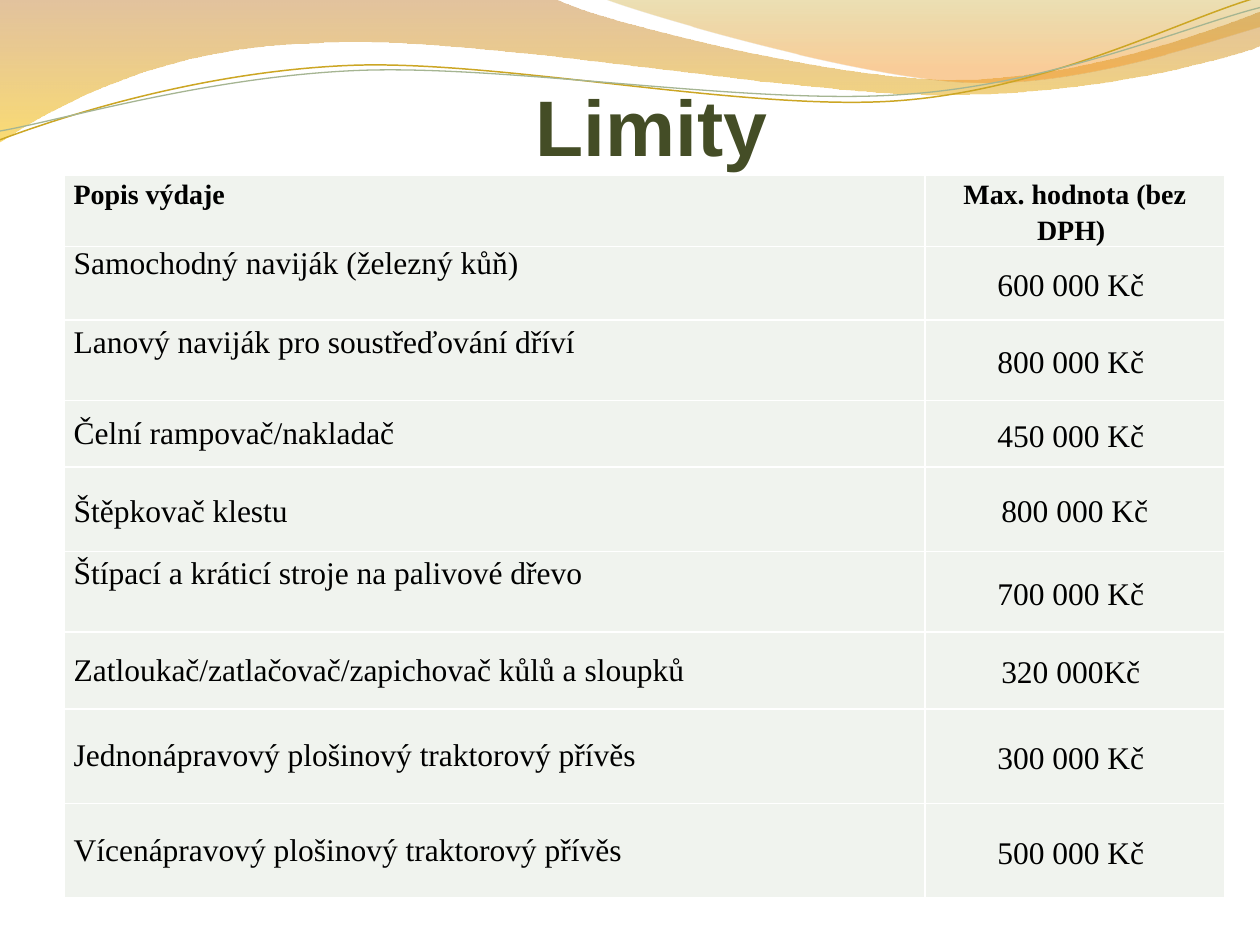
from lxml import etree
from pptx import Presentation, util as u
from pptx.dml.color import RGBColor
from pptx.enum import text as t
from pptx.oxml import parse_xml
from pptx.oxml.ns import nsdecls, qn

WIDE, HIGH = 10, 7.5
UNIT = 1000  # outline units to the inch
WHITE = RGBColor(0xFF, 0xFF, 0xFF)
BLACK = RGBColor(0, 0, 0)
PALE = RGBColor(0xF0, 0xF3, 0xEE)
OLIVE = RGBColor(0x44, 0x4D, 0x26)
BROWN = RGBColor(0xC0, 0x7A, 0x28)
YELLOW = RGBColor(0xF7, 0xBF, 0x00)
KHAKI = RGBColor(0xC0, 0x97, 0x09)
ORANGE = RGBColor(0xF5, 0x93, 0x20)
GOLD = RGBColor(0xCC, 0xA6, 0x24)
SAGE = RGBColor(0xA5, 0xB5, 0x92)

# Outlines: a pair is a corner, six numbers are a Bézier curve
BAND = [(0, 0), (4.4, -0.01), (4.76, 0.17, 6.64, 0.63, 7.58, 0.63),
        (8.53, 0.63, 9.58, 0.26, 10, 0.09), (10.01, 0.36),
        (9.83, 0.44, 8.7, 0.76, 7.46, 0.75), (6.22, 0.75, 3.82, 0.28, 2.57, 0.34),
        (1.29, 0.36, 0.46, 0.83, -0.01, 1.13)]
CREST = [(4.79, -0.01), (5.09, 0.11, 6.82, 0.62, 7.69, 0.65),
         (8.56, 0.69, 9.61, 0.32, 10, 0.21), (10, 0)]
UPPER = [(0, 1.11), (0.48, 0.93, 1.58, 0.57, 2.77, 0.52),
         (3.95, 0.47, 5.93, 0.89, 7.13, 0.8), (8.33, 0.71, 9.38, 0.15, 9.98, -0.02)]
LOWER = [(0, 1.04), (0.47, 0.96, 1.64, 0.61, 2.83, 0.56),
         (4.03, 0.51, 5.97, 0.84, 7.17, 0.75), (8.36, 0.67, 9.41, 0.21, 10, 0.06)]

COLS = [6.83, 2.38]
HEAD = ("Popis výdaje", "Max. hodnota (bez DPH) ")
TOP, MID = t.MSO_ANCHOR.TOP, t.MSO_ANCHOR.MIDDLE
# Label, value, row height, label anchor, label line spacing
ROWS = [
    ("Samochodný naviják (železný kůň)", "600 000 Kč ", 0.58, TOP, 1),
    ("Lanový naviják pro soustřeďování dříví", "800 000 Kč ", 0.64, TOP, 1.15),
    ("Čelní rampovač/nakladač", "450 000 Kč ", 0.53, MID, 1),
    ("Štěpkovač klestu", "800 000 Kč", 0.67, MID, 1.15),
    ("Štípací a kráticí stroje na palivové dřevo", "700 000 Kč ", 0.64, TOP, 1.15),
    ("Zatloukač/zatlačovač/zapichovač kůlů a sloupků", "320 000Kč ", 0.61, MID, 1),
    ("Jednonápravový plošinový traktorový přívěs", "300 000 Kč ", 0.75, MID, 1),
    ("Vícenápravový plošinový traktorový přívěs", "500 000 Kč ", 0.75, MID, 1),
]


def draw(slide, path, close):
    """Join the segment ends, then bend the segments that are curves."""
    segs = [[round(v * UNIT) for v in seg] for seg in path]
    ends = [seg[-2:] for seg in segs]
    pen = slide.shapes.build_freeform(*ends[0], scale=u.Inches(1) / UNIT)
    pen.add_line_segments(ends[1:], close=close)
    shape = pen.convert_to_shape()
    shape.shadow.inherit = False
    left, top = (min(axis) for axis in zip(*ends))
    lines = list(shape.element.spPr.iter(qn("a:lnTo")))
    for line, seg in zip(lines, segs[1:]):
        if len(seg) == 6:
            bend = etree.Element(qn("a:cubicBezTo"))
            for x, y in zip(seg[::2], seg[1::2]):
                etree.SubElement(bend, qn("a:pt"), x=str(x - left), y=str(y - top))
            line.getparent().replace(line, bend)
    return shape


def add_wave(slide, path, stops):
    """Area with a see-through gradient from top to bottom."""
    shape = draw(slide, path, True)
    shape.line.fill.background()
    shape.fill.gradient()
    shape.fill.gradient_angle = 270
    for stop, (pos, color, _) in zip(shape.fill.gradient_stops, stops):
        stop.position = pos
        stop.color.rgb = color
    for tone, (_, _, alpha) in zip(shape.element.spPr.iter(qn("a:srgbClr")), stops):
        etree.SubElement(tone, qn("a:alpha")).set("val", str(alpha * 1000))


def add_curve(slide, path, color, width):
    shape = draw(slide, path, False)
    shape.fill.background()
    shape.line.color.rgb = color
    shape.line.width = u.Pt(width)


def style(font, name, size, color, bold):
    font.name, font.size, font.bold = name, u.Pt(size), bold
    font.color.rgb = color


def set_title(slide, words):
    title = slide.shapes.title
    title.left, title.top = u.Inches(0.67), u.Inches(0.52)
    title.width, title.height = u.Inches(9), u.Inches(0.85)
    frame = title.text_frame
    frame.text = words
    frame.auto_size = t.MSO_AUTO_SIZE.NONE
    frame.vertical_anchor = t.MSO_ANCHOR.BOTTOM
    frame.margin_left = frame.margin_right = frame.margin_bottom = 0
    frame.margin_top = u.Inches(0.05)
    para = frame.paragraphs[0]
    para.alignment = t.PP_ALIGN.CENTER
    style(para.font, "Arial", 45, OLIVE, True)


def set_cell(cell, words, size, bold, align, anchor, space):
    cell.text = words
    cell.vertical_anchor = anchor
    cell.margin_left = cell.margin_right = u.Pt(5.4)
    cell.margin_top = cell.margin_bottom = 0
    para = cell.text_frame.paragraphs[0]
    para.alignment, para.line_spacing = align, space
    style(para.font, "Times New Roman", size, BLACK, bold)
    # Borders come before the fill in the cell's properties
    props = cell._tc.get_or_add_tcPr()
    for side in ("lnL", "lnR", "lnT", "lnB"):
        props.append(parse_xml(
            f'<a:{side} {nsdecls("a")} w="12700"><a:solidFill>'
            f'<a:srgbClr val="{WHITE}"/></a:solidFill></a:{side}>'))
    cell.fill.solid()
    cell.fill.fore_color.rgb = PALE


def add_limits(slide):
    highs = [0.45] + [row[2] for row in ROWS]
    frame = slide.shapes.add_table(
        len(highs), len(COLS), u.Inches(0.51), u.Inches(1.39),
        u.Inches(sum(COLS)), u.Inches(sum(highs)))
    table = frame.table
    for col, width in zip(table.columns, COLS):
        col.width = u.Inches(width)
    for row, high in zip(table.rows, highs):
        row.height = u.Inches(high)
    left, mid = t.PP_ALIGN.LEFT, t.PP_ALIGN.CENTER
    for i, align in enumerate((left, mid)):
        set_cell(table.cell(0, i), HEAD[i], 16, True, align, TOP, 1.15)
    for i, (label, value, _, anchor, space) in enumerate(ROWS, 1):
        set_cell(table.cell(i, 0), label, 18, False, left, anchor, space)
        set_cell(table.cell(i, 1), value, 18, False, mid, MID, 1.15)


def main():
    deck = Presentation()
    deck.slide_width, deck.slide_height = u.Inches(WIDE), u.Inches(HIGH)
    slide = deck.slides.add_slide(deck.slide_layouts[5])
    slide.background.fill.solid()
    slide.background.fill.fore_color.rgb = WHITE
    # Waves along the top
    add_wave(slide, BAND, [(0, BROWN, 45), (1, YELLOW, 55)])
    add_wave(slide, CREST, [(0, KHAKI, 30), (0.8, ORANGE, 45)])
    add_curve(slide, UPPER, GOLD, 0.85)
    add_curve(slide, LOWER, SAGE, 0.75)
    # Heading, moved in front of the waves, and table
    set_title(slide, "Limity")
    slide.shapes._spTree.append(slide.shapes.title.element)
    add_limits(slide)
    deck.save("out.pptx")


if __name__ == "__main__":
    main()
